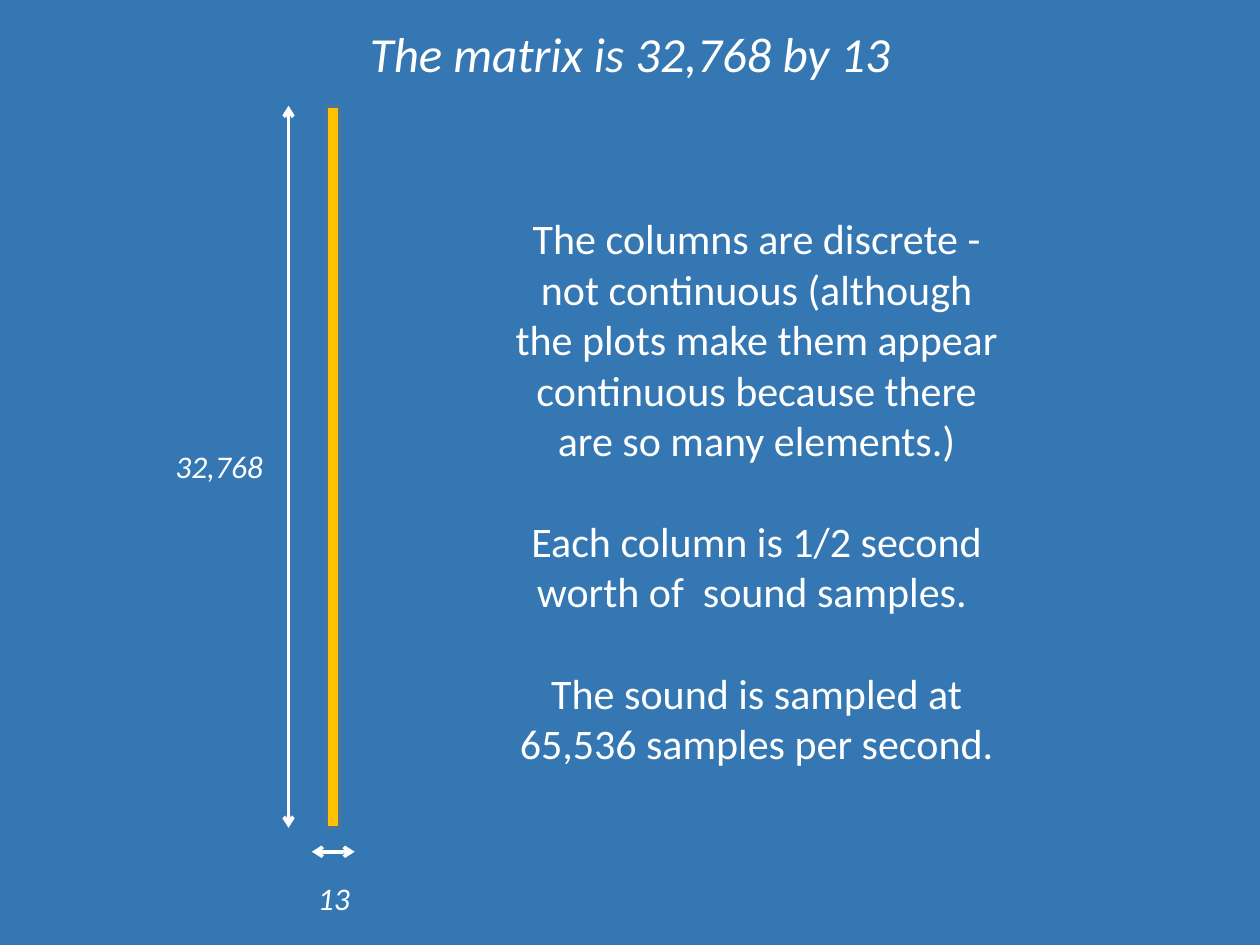
"""Build a slide that shows the dimensions of a sound sample matrix."""
import pptx
import pptx.dml.color
import pptx.enum.shapes
import pptx.enum.text
import pptx.oxml.ns
import pptx.util
from lxml import etree
from pptx.util import Inches

FONT = "Calibri"
BLUE, WHITE, GOLD, EDGE = "3477B2", "FFFFFF", "FFC000", "49749B"
TITLE = "The matrix is 32,768 by 13"
NOTES = [
    "The columns are discrete - not continuous (although the plots make them "
    "appear continuous because there are so many elements.)",
    "Each column is 1/2 second worth of  sound samples. ",
    "The sound is sampled at 65,536 samples per second.",
]
TITLE_BOX = (0, -0.27, 10, 1.78)
NOTES_BOX = (3.95, 1.64, 4.11, 4.54)
MATRIX_BOX = (2.59, 0.84, 0.11, 5.73)
MATRIX_LEFT, MATRIX_TOP, MATRIX_WIDTH, MATRIX_HEIGHT = MATRIX_BOX
MATRIX_BOTTOM = MATRIX_TOP + MATRIX_HEIGHT
MATRIX_CENTER = MATRIX_LEFT + MATRIX_WIDTH / 2
ROW_ARROW_X, COLUMN_ARROW_Y, COLUMN_ARROW_HALF = 2.29, 6.76, 0.17
DIMENSIONS = [
    {"label": "32,768", "box": (1.29, 3.5, 0.9, 0.4),
     "arrow": (ROW_ARROW_X, MATRIX_TOP, ROW_ARROW_X, MATRIX_BOTTOM)},
    {"label": "13", "box": (2.42, 6.93, 0.46, 0.4),
     "arrow": (MATRIX_CENTER - COLUMN_ARROW_HALF, COLUMN_ARROW_Y,
               MATRIX_CENTER + COLUMN_ARROW_HALF, COLUMN_ARROW_Y)},
]


def inches(values):
    return [Inches(value) for value in values]


def color(value):
    return pptx.dml.color.RGBColor.from_string(value)


def set_line(shape, value):
    shape.line.color.rgb = color(value)
    shape.line.width = pptx.util.Pt(2)


def write(shape, paragraphs, size, italic=False, wrap=True, anchor="TOP", gap=0, bottom=0.05):
    frame = shape.text_frame
    frame.word_wrap = wrap
    frame.auto_size = pptx.enum.text.MSO_AUTO_SIZE.NONE
    frame.vertical_anchor = pptx.enum.text.MSO_ANCHOR[anchor]
    frame.margin_bottom = Inches(bottom)
    for index, text in enumerate(paragraphs):
        paragraph = frame.add_paragraph() if index else frame.paragraphs[0]
        paragraph.alignment = pptx.enum.text.PP_ALIGN.CENTER
        paragraph.line_spacing = 1.0
        paragraph.space_before = pptx.util.Pt(gap if index else 0)
        run = paragraph.add_run()
        run.text = text
        run.font.name = FONT
        run.font.size = pptx.util.Pt(size)
        run.font.italic = italic
        run.font.color.rgb = color(WHITE)


def add_double_arrow(shapes, ends):
    arrow = shapes.add_connector(pptx.enum.shapes.MSO_CONNECTOR.STRAIGHT, *inches(ends))
    set_line(arrow, WHITE)
    line = arrow.line._get_or_add_ln()
    for end in ("a:headEnd", "a:tailEnd"):
        etree.SubElement(line, pptx.oxml.ns.qn(end), type="arrow")
    etree.SubElement(arrow._element.spPr, pptx.oxml.ns.qn("a:effectLst"))


def main():
    presentation = pptx.Presentation()
    presentation.slide_width, presentation.slide_height = inches((10, 7.5))
    slide = presentation.slides.add_slide(presentation.slide_layouts[5])
    slide.background.fill.solid()
    slide.background.fill.fore_color.rgb = color(BLUE)

    title = slide.shapes.title
    title.left, title.top, title.width, title.height = inches(TITLE_BOX)
    write(title, [TITLE], size=28, italic=True, anchor="MIDDLE", bottom=0.45)

    diagram = slide.shapes.add_group_shape().shapes
    matrix = diagram.add_shape(pptx.enum.shapes.MSO_SHAPE.RECTANGLE, *inches(MATRIX_BOX))
    matrix.shadow.inherit = False
    matrix.fill.solid()
    matrix.fill.fore_color.rgb = color(GOLD)
    set_line(matrix, EDGE)
    for dimension in DIMENSIONS:
        add_double_arrow(diagram, dimension["arrow"])
        label = diagram.add_textbox(*inches(dimension["box"]))
        write(label, [dimension["label"]], size=18, italic=True, wrap=False)

    notes = slide.shapes.add_textbox(*inches(NOTES_BOX))
    write(notes, NOTES, size=24, gap=29)
    presentation.save("out.pptx")


if __name__ == "__main__":
    main()
